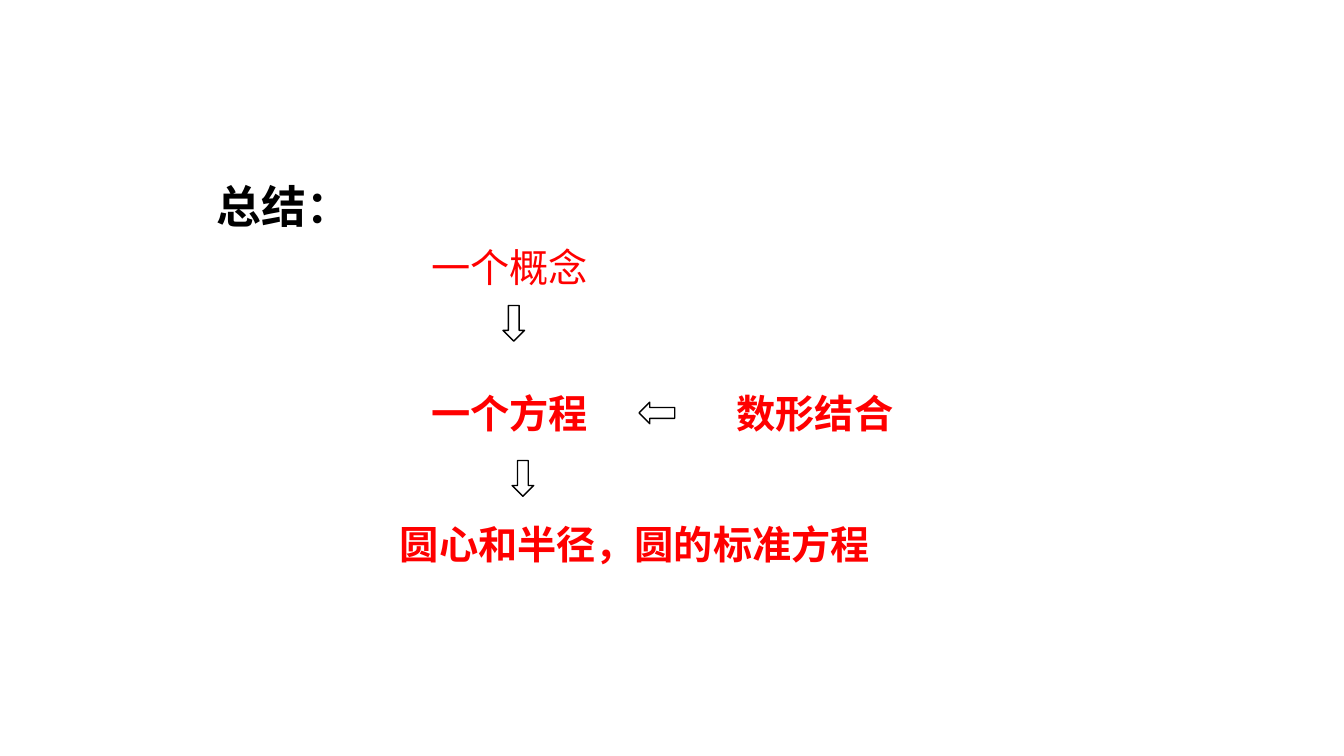
from dataclasses import dataclass

from lxml.etree import SubElement
from pptx import Presentation
from pptx.dml.color import RGBColor
from pptx.enum.shapes import MSO_SHAPE
from pptx.enum.text import MSO_ANCHOR, MSO_AUTO_SIZE, PP_ALIGN
from pptx.oxml.ns import qn
from pptx.util import Pt


@dataclass(frozen=True)
class Theme:
    """Colours, fonts and type sizes of the slide."""
    ink: RGBColor = RGBColor(0, 0, 0)
    accent: RGBColor = RGBColor(255, 0, 0)
    heading_font: str = "Noto Sans CJK SC"
    plain_font: str = "Arial"
    title_size: int = 32
    step_size: int = 28


THEME = Theme()


def write_text(shape, text, size, color, font=THEME.heading_font, bold=True):
    """Fill a shape with one left-aligned, formatted paragraph."""
    frame = shape.text_frame
    frame.text = text
    frame.word_wrap = True
    frame.auto_size = MSO_AUTO_SIZE.NONE
    frame.vertical_anchor = MSO_ANCHOR.TOP
    paragraph = frame.paragraphs[0]
    paragraph.alignment = PP_ALIGN.LEFT
    paragraph.line_spacing = 1.0
    run = paragraph.runs[0]
    run.font.size = Pt(size)
    run.font.bold = bold
    run.font.color.rgb = color
    run.font.name = font
    SubElement(run.font._element, qn("a:ea"), typeface=font)


def add_title(slide, text, left, top, width, height):
    """Place the heading in the title placeholder."""
    title = slide.shapes.title
    title.left, title.top = Pt(left), Pt(top)
    title.width, title.height = Pt(width), Pt(height)
    write_text(title, text, THEME.title_size, THEME.ink)


def add_step(slide, text, left, top, width, height=41, **style):
    """Add one red step of the summary."""
    box = slide.shapes.add_textbox(Pt(left), Pt(top), Pt(width), Pt(height))
    write_text(box, text, THEME.step_size, THEME.accent, **style)


def add_arrow(slide, left, top, rotation=0):
    """Add an outlined block arrow that points down before rotation."""
    arrow = slide.shapes.add_shape(
        MSO_SHAPE.DOWN_ARROW, Pt(left), Pt(top), Pt(15.4), Pt(25.5))
    arrow.rotation = rotation
    arrow.shadow.inherit = False
    arrow.fill.background()
    arrow.line.color.rgb = THEME.ink
    arrow.line.width = Pt(1)


def main():
    """Build and save the summary slide."""
    presentation = Presentation()
    presentation.slide_width, presentation.slide_height = Pt(960), Pt(540)
    slide = presentation.slides.add_slide(presentation.slide_layouts[5])
    add_title(slide, "总结：", 147.6, 123.8, 424.8, 46)
    add_step(slide, "一个概念", 301, 170, 194.4, font=THEME.plain_font, bold=False)
    add_arrow(slide, 359.3, 218.2)
    add_step(slide, "一个方程", 301, 274.3, 139)
    add_arrow(slide, 461.5, 282.2, rotation=90)
    add_step(slide, "数形结合", 519.1, 274.3, 135.4)
    add_arrow(slide, 365.8, 329)
    add_step(slide, "圆心和半径，圆的标准方程", 278.6, 368, 368, 75)
    presentation.save("out.pptx")


if __name__ == "__main__":
    main()
